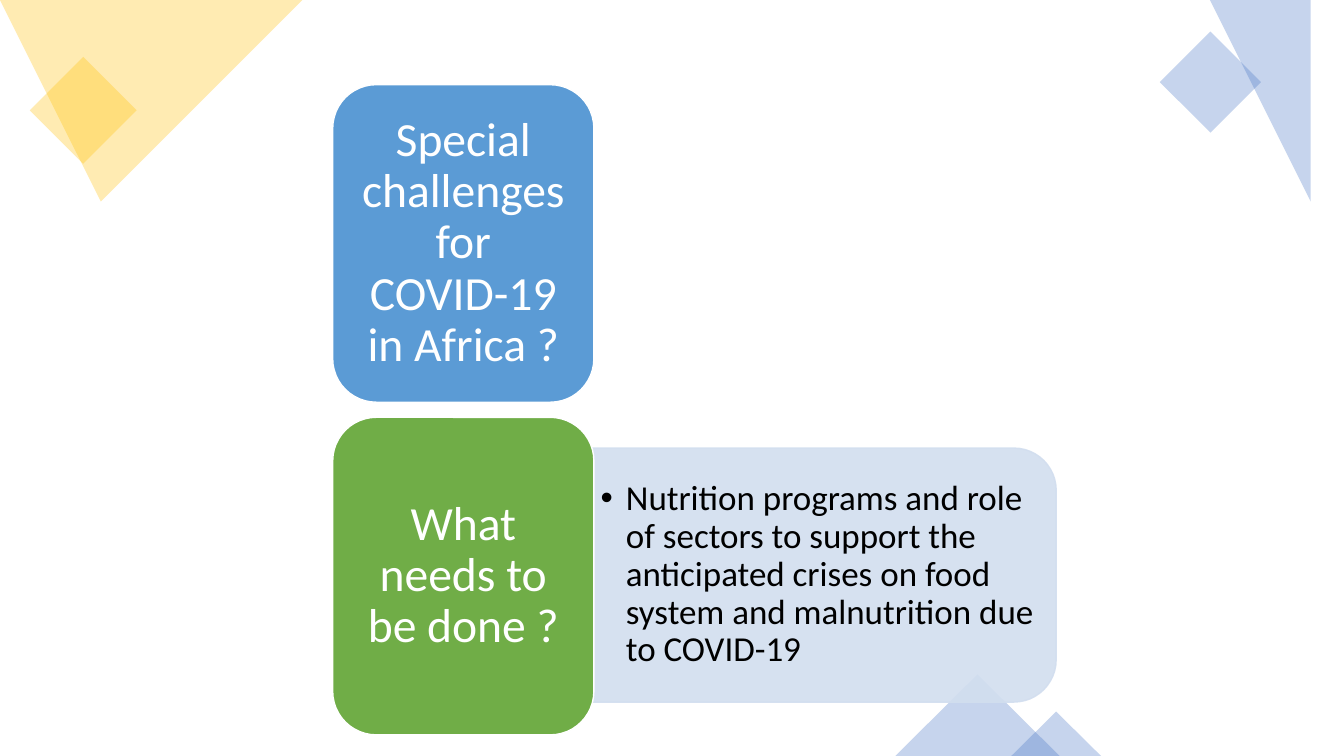
"""Build a slide with two topic cards, a detail panel and corner ornaments."""
from dataclasses import dataclass
from typing import Any, Optional

from lxml.etree import SubElement
from pptx import Presentation
from pptx.dml.color import RGBColor
from pptx.dml.fill import FillFormat
from pptx.enum.shapes import MSO_SHAPE
from pptx.enum.text import MSO_ANCHOR, PP_ALIGN
from pptx.oxml.ns import qn
from pptx.shapes.autoshape import Shape
from pptx.slide import Slide
from pptx.util import Inches, Pt

COLORS = {
    "gold": "FFC000",
    "blue": "4472C4",
    "sky": "5B9BD5",
    "green": "70AD47",
    "pale": "D2DEEF",
    "white": "FFFFFF",
    "black": "000000",
}


@dataclass(frozen=True)
class Block:
    kind: MSO_SHAPE
    left: float
    top: float
    width: float
    height: float
    color: str
    opacity: int = 100
    rotation: float = 0
    line: Optional[str] = None
    text: str = ""


@dataclass(frozen=True)
class Polygon:
    points: tuple[tuple[float, float], ...]
    color: str
    opacity: int


@dataclass(frozen=True)
class TextStyle:
    size: int
    color: str
    align: PP_ALIGN
    side_inset: float
    end_inset: float


CARD_STYLE = TextStyle(34, "white", PP_ALIGN.CENTER, 0.14, 0.07)
DETAIL_STYLE = TextStyle(25, "black", PP_ALIGN.LEFT, 0.1, 0.05)

POLYGONS = [
    Polygon(((0, 0), (3.1, 0), (1.4, 1.62), (0, 0.28)), "gold", 30),
    Polygon(((11.81, 0), (13.33, 0), (13.33, 1.3), (12.92, 1.71), (11.5, 0.3)), "blue", 30),
]
ORNAMENTS = [
    Block(MSO_SHAPE.RECTANGLE, 0.45, 0.72, 0.75, 0.75, "gold", 30, 45),
    Block(MSO_SHAPE.RECTANGLE, 11.65, 0.46, 0.71, 0.71, "blue", 30, 45),
    Block(MSO_SHAPE.ISOSCELES_TRIANGLE, 8.88, 6.69, 1.63, 0.81, "blue", 30),
    Block(MSO_SHAPE.ISOSCELES_TRIANGLE, 10.03, 7.06, 0.89, 0.44, "blue", 30),
]
TOPICS = [
    Block(MSO_SHAPE.ROUNDED_RECTANGLE, 3.3, 0.84, 2.59, 3.15, "sky", line="white",
          text="Special challenges for COVID-19 in Africa ?"),
    Block(MSO_SHAPE.ROUND_2_SAME_RECTANGLE, 6.91, 3.4, 2.52, 4.61, "pale", 90, 90, "pale"),
    Block(MSO_SHAPE.ROUNDED_RECTANGLE, 3.3, 4.14, 2.59, 3.15, "green", line="white",
          text="What needs to be done ?"),
]
DETAIL = ("Nutrition programs and role of sectors to support the anticipated "
          "crises on food system and malnutrition due to COVID-19")


def set_attributes(target: Any, values: dict[str, Any]) -> None:
    for name, value in values.items():
        setattr(target, name, value)


def paint(fill: FillFormat, color: str, opacity: int, parent: Any) -> None:
    fill.solid()
    fill.fore_color.rgb = RGBColor.from_string(COLORS[color])
    if opacity < 100:
        color_element = parent.find(qn("a:solidFill"))[0]
        SubElement(color_element, qn("a:alpha"), val=str(opacity * 1000))


def style_shape(shape: Shape, color: str, opacity: int, line: Optional[str] = None) -> None:
    shape.shadow.inherit = False
    properties = shape.element.spPr
    paint(shape.fill, color, opacity, properties)
    if line is None:
        shape.line.fill.background()
    else:
        shape.line.width = Pt(1)
        paint(shape.line.fill, line, opacity, properties.find(qn("a:ln")))


def write_text(shape: Shape, text: str, style: TextStyle, bullet: bool = False) -> None:
    frame = shape.text_frame
    set_attributes(frame, {
        "word_wrap": True,
        "vertical_anchor": MSO_ANCHOR.MIDDLE,
        "margin_left": Inches(style.side_inset),
        "margin_right": Inches(style.side_inset),
        "margin_top": Inches(style.end_inset),
        "margin_bottom": Inches(style.end_inset),
    })
    paragraph = frame.paragraphs[0]
    set_attributes(paragraph, {"alignment": style.align, "line_spacing": 0.9})
    run = paragraph.add_run()
    run.text = text
    set_attributes(run.font, {"name": "Calibri", "size": Pt(style.size)})
    run.font.color.rgb = RGBColor.from_string(COLORS[style.color])
    if bullet:
        paragraph.level = 1
        properties = paragraph._p.get_or_add_pPr()
        properties.set("marL", str(Inches(0.25)))
        properties.set("indent", str(Inches(-0.25)))
        SubElement(properties, qn("a:buFont"), typeface="Arial")
        SubElement(properties, qn("a:buChar"), char="•")


def draw_polygon(slide: Slide, polygon: Polygon) -> None:
    start, *corners = polygon.points
    builder = slide.shapes.build_freeform(*start, scale=Inches(1))
    builder.add_line_segments(corners, close=True)
    style_shape(builder.convert_to_shape(), polygon.color, polygon.opacity)


def draw_block(slide: Slide, block: Block) -> None:
    box = map(Inches, (block.left, block.top, block.width, block.height))
    shape = slide.shapes.add_shape(block.kind, *box)
    shape.rotation = block.rotation
    style_shape(shape, block.color, block.opacity, block.line)
    if block.text:
        write_text(shape, block.text, CARD_STYLE)


def main() -> None:
    presentation = Presentation()
    set_attributes(presentation, {"slide_width": Inches(13.33), "slide_height": Inches(7.5)})
    slide = presentation.slides.add_slide(presentation.slide_layouts[6])
    for polygon in POLYGONS:
        draw_polygon(slide, polygon)
    for block in ORNAMENTS + TOPICS:
        draw_block(slide, block)
    detail_box = slide.shapes.add_textbox(*map(Inches, (5.86, 4.57, 4.49, 2.27)))
    write_text(detail_box, DETAIL, DETAIL_STYLE, bullet=True)
    presentation.save("out.pptx")


if __name__ == "__main__":
    main()
